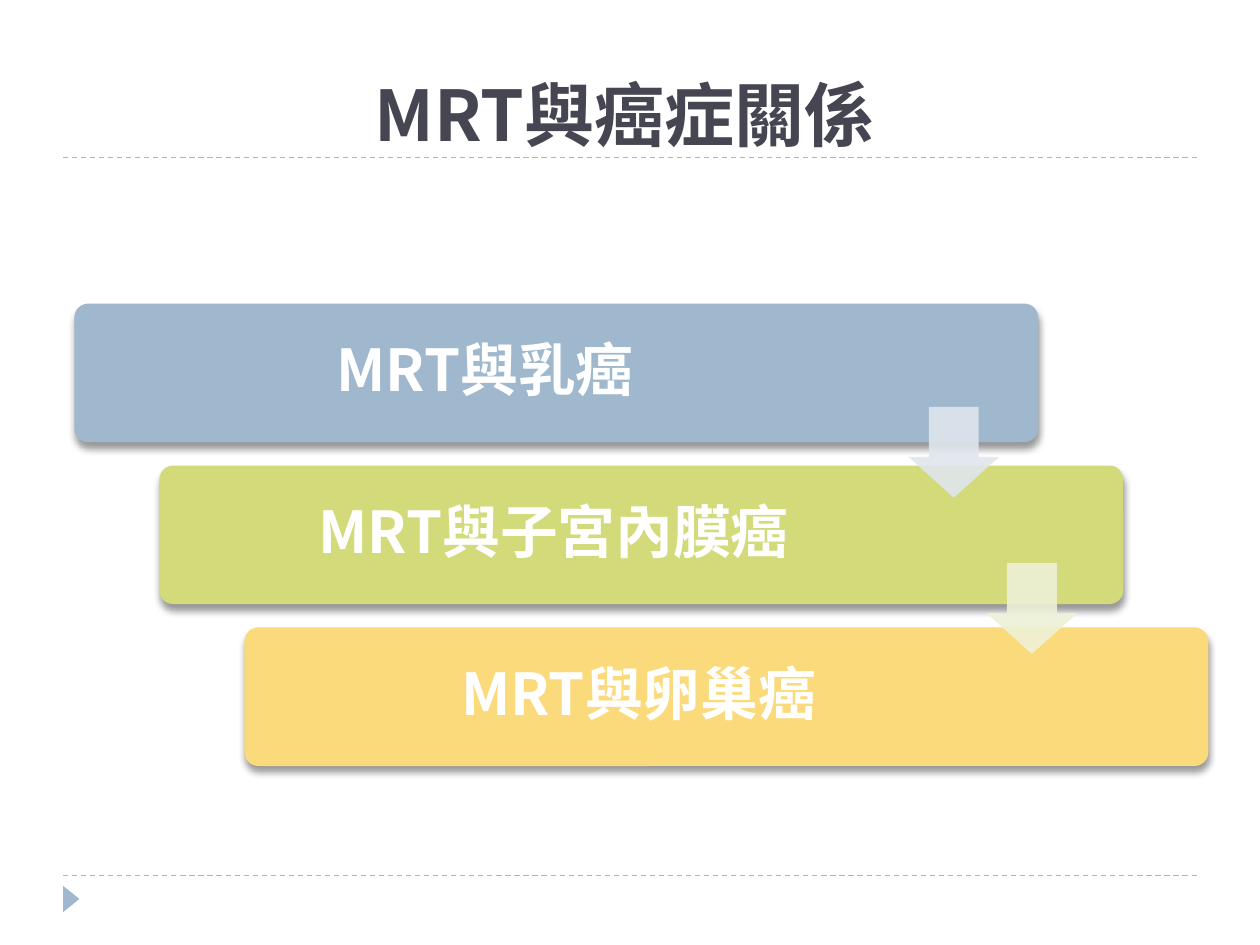
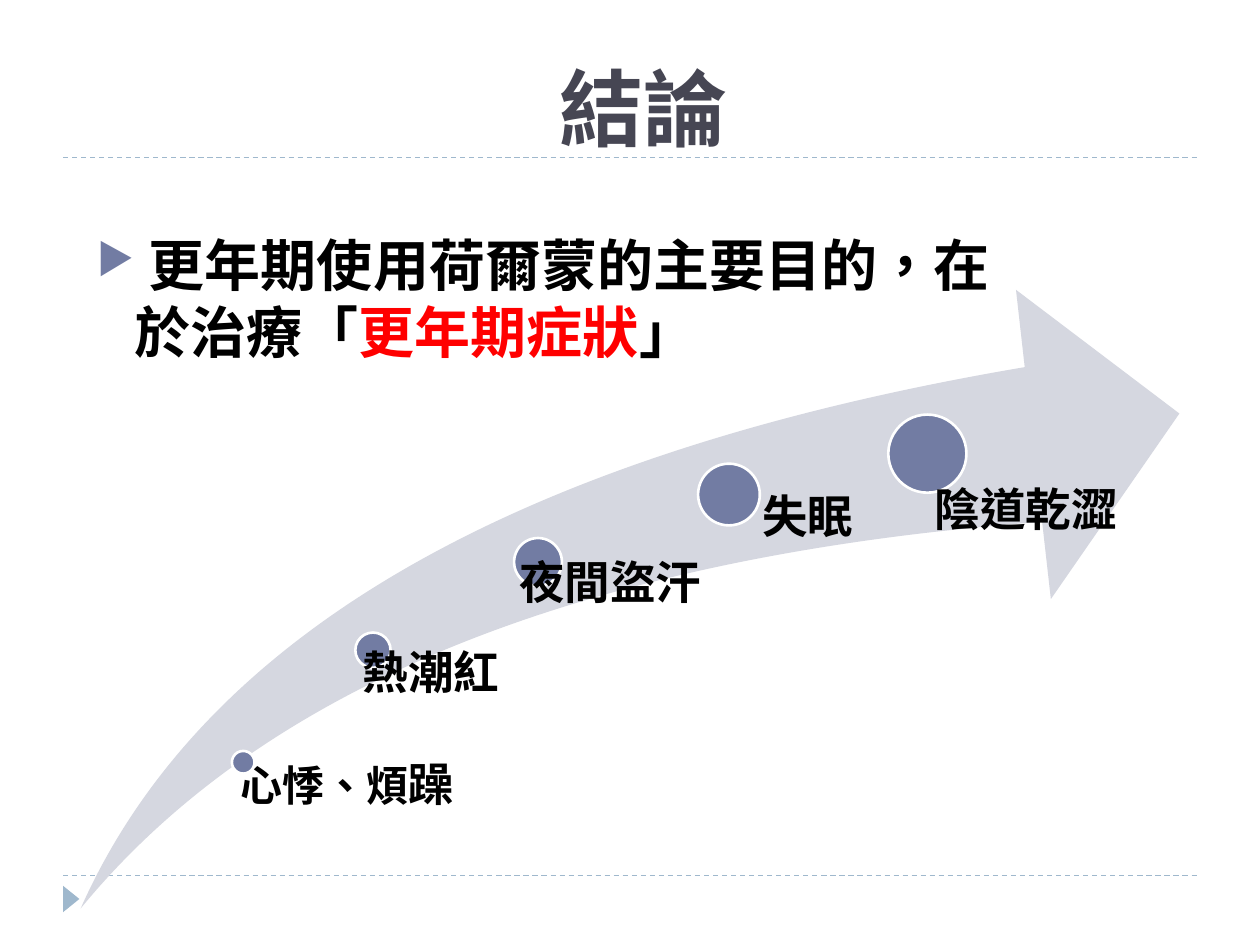
import pptx
import pptx.util
import pptx.dml.color
import pptx.enum.dml
import pptx.enum.shapes
import pptx.enum.text
import pptx.oxml
import pptx.oxml.ns
from dataclasses import dataclass
from lxml import etree

Inches, Pt = pptx.util.Inches, pptx.util.Pt
SHAPE = pptx.enum.shapes.MSO_SHAPE
ALIGN = pptx.enum.text.PP_ALIGN
ANCHOR = pptx.enum.text.MSO_ANCHOR
qn = pptx.oxml.ns.qn


@dataclass(frozen=True)
class Theme:
    ink: str = "464653"
    black: str = "000000"
    white: str = "FFFFFF"
    alert: str = "FF0000"
    blue: str = "9FB8CD"
    green: str = "D2DA7A"
    yellow: str = "FADA7A"
    pale_blue: str = "DFE6ED"
    pale_green: str = "EEF1D7"
    indigo: str = "727CA3"
    swoosh: str = "D5D7E0"
    latin: str = "Arial"
    cjk: str = "Noto Sans CJK SC"
    title_size: int = 40
    closing_size: int = 48
    bar_size: int = 33
    body_size: int = 32
    symptom_size: int = 26
    small_size: int = 24


THEME = Theme()

RELATION_TITLE = "MRT與癌症關係"
# label, bar colour, label width
CANCERS = [
    ("MRT與乳癌", THEME.blue, 6.52),
    ("MRT與子宮內膜癌", THEME.green, 6.26),
    ("MRT與卵巢癌", THEME.yellow, 6.26),
]
STEP_ARROWS = [THEME.pale_blue, THEME.pale_green]

CONCLUSION_TITLE = "結論"
# text, colour, bold
PURPOSE = [
    (" ", THEME.black, False),
    ("更年期使用荷爾蒙的主要目的，在於治療「", THEME.black, True),
    ("更年期症狀", THEME.alert, True),
    ("」", THEME.black, True),
]
# text runs with sizes, dot (left, top, diameter), label (left, top, width, height)
SYMPTOMS = [
    ([("心悸、煩", THEME.small_size), ("躁", THEME.symptom_size)],
     (1.84, 5.96, 0.18), (1.81, 6.05, 2.79, 1.17)),
    ([("熱潮紅", THEME.symptom_size)], (2.82, 5.02, 0.28), (2.73, 5.16, 2.33, 2.06)),
    ([("夜間盜汗", THEME.symptom_size)], (4.08, 4.27, 0.38), (3.92, 4.45, 2.21, 2.76)),
    ([("失眠", THEME.symptom_size)], (5.54, 3.68, 0.49), (5.79, 3.92, 1.57, 3.29)),
    ([("陰道乾澀", THEME.symptom_size)], (7.05, 3.29, 0.62), (7.09, 3.87, 2.3, 0.94)),
]


def rgb(colour):
    return pptx.dml.color.RGBColor.from_string(colour)


def inches(box):
    return [Inches(length) for length in box]


def apply(target, values):
    for key, value in values.items():
        setattr(target, key, value)


def add_solid(slide, kind, box, colour, adjustments=(), outline=None):
    solid = slide.shapes.add_shape(kind, *inches(box))
    solid.shadow.inherit = False
    solid.fill.solid()
    solid.fill.fore_color.rgb = rgb(colour)
    for index, value in enumerate(adjustments):
        solid.adjustments[index] = value
    if outline:
        solid.line.color.rgb = rgb(outline)
        solid.line.width = Pt(1.5)
    else:
        solid.line.fill.background()
    return solid


def add_text(slide, box, runs, font, frame_format=None, paragraph_format=None):
    """Add one paragraph of (text, size, colour, bold) runs and return it."""
    frame = slide.shapes.add_textbox(*inches(box)).text_frame
    apply(frame, {"word_wrap": True, **(frame_format or {})})
    paragraph = frame.paragraphs[0]
    apply(paragraph, paragraph_format or {})
    for text, size, colour, bold in runs:
        run = paragraph.add_run()
        run.text = text
        apply(run.font, {"size": Pt(size), "bold": bold, "name": font})
        run.font.color.rgb = rgb(colour)
        properties = run._r.get_or_add_rPr()
        properties.set("lang", "zh-TW")
        etree.SubElement(properties, qn("a:ea"), typeface=THEME.cjk)
    return paragraph


def add_soft_shadow(solid):
    effects = solid._element.spPr.find(qn("a:effectLst"))
    shadow = etree.SubElement(effects, qn("a:outerShdw"), blurRad=str(Pt(4)),
                              dist=str(Pt(3.4)), dir="5400000", rotWithShape="0")
    tint = etree.SubElement(shadow, qn("a:srgbClr"), val=THEME.black)
    etree.SubElement(tint, qn("a:alpha"), val="40000")


def set_opacity(solid, percent):
    tint = solid._element.spPr.find(qn("a:solidFill")).find(qn("a:srgbClr"))
    etree.SubElement(tint, qn("a:alpha"), val=str(percent * 1000))


def add_bullet(paragraph, indent):
    properties = paragraph._p.get_or_add_pPr()
    properties.set("marL", str(Inches(indent)))
    properties.set("indent", str(-Inches(indent)))
    colour = etree.SubElement(properties, qn("a:buClr"))
    etree.SubElement(colour, qn("a:srgbClr"), val=THEME.indigo)
    etree.SubElement(properties, qn("a:buSzPct"), val="76000")
    etree.SubElement(properties, qn("a:buChar"), char="▶")


def add_framed_slide(deck, title, box, size, font):
    """Add a slide with the shared rules, corner marker and title."""
    slide = deck.slides.add_slide(deck.slide_layouts[6])
    for height in (6.95, 1.25):
        rule = slide.shapes.add_connector(
            pptx.enum.shapes.MSO_CONNECTOR.STRAIGHT, *inches((0.5, height, 9.5, height)))
        rule.line.color.rgb = rgb(THEME.blue)
        apply(rule.line, {"width": Pt(0.75),
                          "dash_style": pptx.enum.dml.MSO_LINE.DASH})
        etree.SubElement(rule._element.spPr, qn("a:effectLst"))
    marker = add_solid(slide, SHAPE.ISOSCELES_TRIANGLE, (0.46, 7.07, 0.21, 0.13), THEME.blue)
    marker.rotation = 90
    add_text(slide, box, [(title, size, THEME.ink, True)], font,
             {"vertical_anchor": ANCHOR.BOTTOM}, {"alignment": ALIGN.CENTER})
    return slide


def build_relation(deck):
    slide = add_framed_slide(deck, RELATION_TITLE, (0.83, -0.19, 8.25, 1.47),
                             THEME.title_size, THEME.cjk)
    margins = {f"margin_{side}": Inches(0.14) for side in ("left", "top", "right", "bottom")}
    for step, (label, colour, label_width) in enumerate(CANCERS):
        left, top = 0.59 + 0.675 * step, 2.41 + 1.285 * step
        bar = add_solid(slide, SHAPE.ROUNDED_RECTANGLE, (left, top, 7.65, 1.1), colour, [0.1])
        add_soft_shadow(bar)
        add_text(slide, (left, top, label_width, 1.1),
                 [(label, THEME.bar_size, THEME.white, True)], THEME.cjk,
                 {"vertical_anchor": ANCHOR.MIDDLE, **margins},
                 {"alignment": ALIGN.CENTER, "line_spacing": 0.9})
    for step, colour in enumerate(STEP_ARROWS):
        arrow = add_solid(slide, SHAPE.DOWN_ARROW,
                          (7.21 + 0.62 * step, 3.23 + 1.24 * step, 0.72, 0.72),
                          colour, [0.55, 0.45])
        set_opacity(arrow, 90)


def build_conclusion(deck):
    slide = add_framed_slide(deck, CONCLUSION_TITLE, (0.98, 0, 8.25, 1.3),
                             THEME.closing_size, THEME.latin)
    purpose = add_text(slide, (0.67, 1.78, 7.68, 1.55),
                       [(text, THEME.body_size, colour, bold) for text, colour, bold in PURPOSE],
                       THEME.latin, paragraph_format={"space_before": Pt(6)})
    add_bullet(purpose, 0.3)
    add_solid(slide, SHAPE.SWOOSH_ARROW, (0.64, 2.3, 8.72, 4.91), THEME.swoosh, [0.25, 0.25])
    for words, (left, top, diameter), label_box in SYMPTOMS:
        add_solid(slide, SHAPE.OVAL, (left, top, diameter, diameter), THEME.indigo,
                  outline=THEME.white)
        add_text(slide, label_box,
                 [(text, size, THEME.black, True) for text, size in words], THEME.latin,
                 {"margin_left": Inches(0.53 * diameter), "margin_top": 0,
                  "margin_right": 0, "margin_bottom": 0},
                 {"line_spacing": 0.9})


def main():
    deck = pptx.Presentation()
    apply(deck, {"slide_width": Inches(10), "slide_height": Inches(7.5)})
    build_relation(deck)
    build_conclusion(deck)
    deck.save("out.pptx")


if __name__ == "__main__":
    main()
